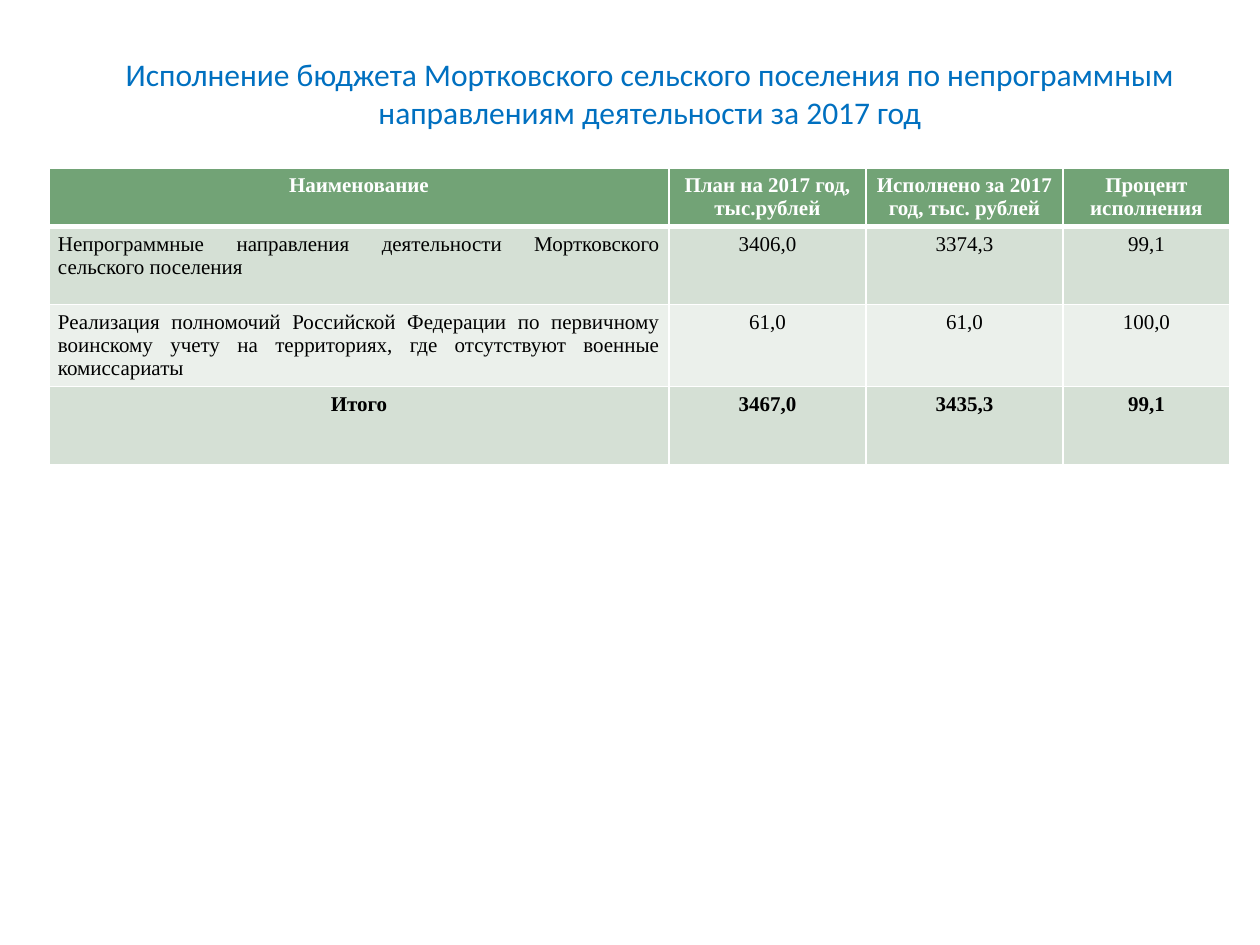
from lxml.etree import SubElement
from pptx import Presentation
from pptx.dml.color import RGBColor
from pptx.enum.text import MSO_ANCHOR as Anchor, PP_ALIGN as Align
from pptx.oxml.ns import qn
from pptx.util import Emu, Pt

BLUE = RGBColor(0x00, 0x70, 0xC0)
WHITE = RGBColor(0xFF, 0xFF, 0xFF)
BLACK = RGBColor(0x00, 0x00, 0x00)
GREEN = RGBColor(0x72, 0xA3, 0x76)
LIGHT_GREEN = RGBColor(0xD5, 0xE0, 0xD5)
PALE_GREEN = RGBColor(0xEB, 0xF0, 0xEB)

TITLE = ("Исполнение бюджета Мортковского сельского поселения "
         "по непрограммным направлениям деятельности за 2017 год")
ROWS = [
    ("Наименование", "План на 2017 год,\nтыс.рублей",
     "Исполнено за 2017 год, тыс. рублей", "Процент исполнения"),
    ("Непрограммные направления деятельности Мортковского сельского поселения",
     "3406,0", "3374,3", "99,1"),
    ("Реализация полномочий Российской Федерации по первичному воинскому учету "
     "на территориях, где отсутствуют военные комиссариаты",
     "61,0", "61,0", "100,0"),
    ("Итого", "3467,0", "3435,3", "99,1"),
]
COLUMN_WIDTHS = [620, 197, 197, 167]
ROW_HEIGHTS = [58, 78, 82, 78]
THIN, THICK = 0.96, 3


def px(length):
    return Emu(round(length * 914400 / 126))


def write_text(text_frame, text, font="Times New Roman", size=12, color=BLACK,
               bold=False, align=Align.CENTER):
    text_frame.text = text
    for paragraph in text_frame.paragraphs:
        paragraph.alignment = align
        for run in paragraph.runs:
            run.font.name = font
            run.font.size = Pt(size)
            run.font.bold = bold
            run.font.color.rgb = color


def add_borders(cell, top, bottom):
    properties = cell._tc.get_or_add_tcPr()
    for side, width in (("L", THIN), ("R", THIN), ("T", top), ("B", bottom)):
        line = SubElement(properties, qn(f"a:ln{side}"), w=str(Pt(width)))
        fill = SubElement(line, qn("a:solidFill"))
        SubElement(fill, qn("a:srgbClr"), val=str(WHITE))


def add_title(slide):
    title = slide.shapes.title
    title.left, title.top, title.width, title.height = map(px, (69, 49, 1162, 88))
    title.text_frame.word_wrap = True
    title.text_frame.vertical_anchor = Anchor.MIDDLE
    write_text(title.text_frame, TITLE, font="Calibri", size=18, color=BLUE)


def format_cell(cell, row, column):
    is_header, is_total = row == 0, row == len(ROWS) - 1
    is_description = column == 0 and not (is_header or is_total)
    cell.margin_left = cell.margin_right = px(9)
    cell.margin_top = cell.margin_bottom = px(6)
    write_text(cell.text_frame, ROWS[row][column],
               color=WHITE if is_header else BLACK,
               bold=is_header or is_total,
               align=Align.JUSTIFY if is_description else Align.CENTER)
    add_borders(cell, top=THICK if row == 1 else THIN,
                bottom=THICK if is_header else THIN)
    cell.fill.solid()
    band = LIGHT_GREEN if row % 2 else PALE_GREEN
    cell.fill.fore_color.rgb = GREEN if is_header else band


def add_budget_table(slide):
    table = slide.shapes.add_table(
        len(ROWS), len(COLUMN_WIDTHS), px(49), px(168),
        px(sum(COLUMN_WIDTHS)), px(sum(ROW_HEIGHTS))).table
    for column, width in zip(table.columns, COLUMN_WIDTHS):
        column.width = px(width)
    for row, height in zip(table.rows, ROW_HEIGHTS):
        row.height = px(height)
    for row in range(len(ROWS)):
        for column in range(len(COLUMN_WIDTHS)):
            format_cell(table.cell(row, column), row, column)


def main():
    presentation = Presentation()
    presentation.slide_width, presentation.slide_height = px(1260), px(945)
    slide = presentation.slides.add_slide(presentation.slide_layouts[5])
    add_title(slide)
    add_budget_table(slide)
    presentation.save("out.pptx")


if __name__ == "__main__":
    main()
